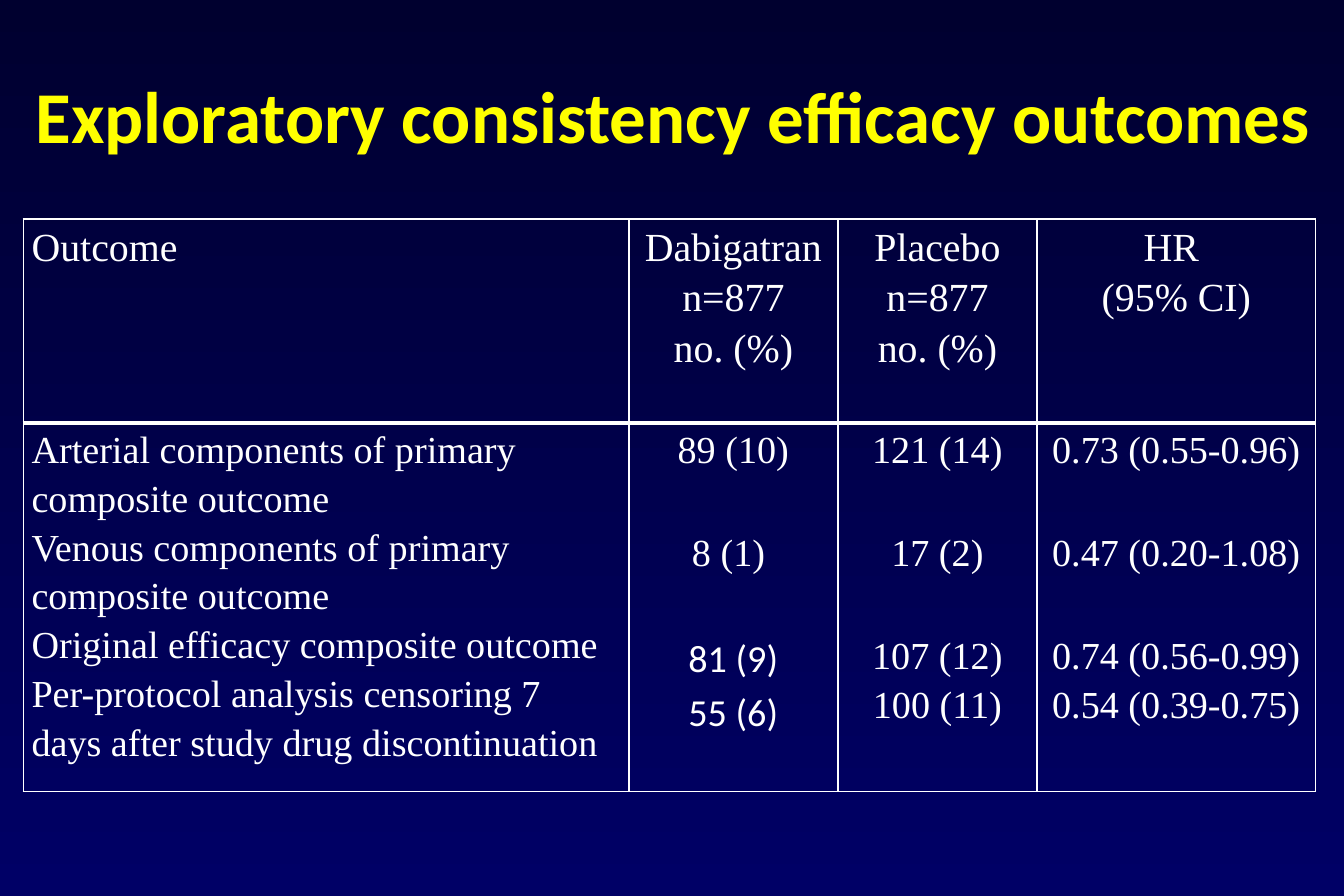
from lxml.etree import SubElement
from pptx import Presentation
from pptx.dml.color import RGBColor
from pptx.enum.text import MSO_ANCHOR, PP_ALIGN
from pptx.oxml import parse_xml
from pptx.oxml.ns import nsdecls
from pptx.util import Pt

# Content
TITLE = "Exploratory consistency efficacy outcomes"
HEADINGS = [
    ["Outcome"],
    ["Dabigatran", "n=877", "no. (%)"],
    ["Placebo", "n=877", "no. (%)"],
    ["HR ", "(95% CI)"],
]
RESULTS = [
    ["Arterial components of primary composite outcome",
     "Venous components of primary composite outcome",
     "Original efficacy composite outcome",
     "Per-protocol analysis censoring 7 days after study drug discontinuation"],
    ["89 (10)", "8 (1) ", "81 (9)", "55 (6)"],
    ["121 (14)", "17 (2)", "107 (12)", "100 (11)"],
    ["0.73 (0.55-0.96)", "0.47 (0.20-1.08)", "0.74 (0.56-0.99)", "0.54 (0.39-0.75)"],
]
CALIBRI_RESULTS = {"81 (9)", "55 (6)"}

# Style
NIGHT = RGBColor(0x00, 0x00, 0x2F)
NAVY = RGBColor(0x00, 0x00, 0x66)
YELLOW = RGBColor(0xFF, 0xFF, 0x00)
WHITE = RGBColor(0xFF, 0xFF, 0xFF)
SANS, SERIF = "Calibri", "Times New Roman"
COLUMN_WIDTHS = [365, 126, 120, 168]
ROW_HEIGHTS = [123, 215]
TABLE_LEFT, TABLE_TOP = 14, 132
HEADING_SIZE, RESULT_SIZE = 24, 23
LINE_SPACING = 1.15
OUTCOME_GAP = 32.6  # lines up figures with outcomes that take two lines
THIN, THICK = 1, 3


def add_text(paragraph, text, size, font, color, bold=False):
    run = paragraph.add_run()
    run.text = text
    run.font.size = Pt(size)
    run.font.name = font
    run.font.bold = bold
    run.font.color.rgb = color


def set_borders(cell, top, bottom):
    properties = cell._tc.get_or_add_tcPr()
    widths = {"lnL": THIN, "lnR": THIN, "lnT": top, "lnB": bottom}
    for position, (side, width) in enumerate(widths.items()):
        border = parse_xml(f'<a:{side} {nsdecls("a")} w="{Pt(width)}"/>')
        fill = SubElement(border, border.tag.replace(side, "solidFill"))
        SubElement(fill, border.tag.replace(side, "srgbClr"), val=str(WHITE))
        properties.insert(position, border)


def fill_cell(cell, lines, size, centred, gaps):
    cell.fill.background()
    cell.margin_left = cell.margin_right = Pt(5)
    cell.margin_top = cell.margin_bottom = 0
    frame = cell.text_frame
    for index, line in enumerate(lines):
        paragraph = frame.add_paragraph() if index else frame.paragraphs[0]
        paragraph.alignment = PP_ALIGN.CENTER if centred else PP_ALIGN.LEFT
        paragraph.line_spacing = LINE_SPACING
        paragraph.space_before = Pt(OUTCOME_GAP if index in gaps else 0)
        add_text(paragraph, line, size, SANS if line in CALIBRI_RESULTS else SERIF, WHITE)


presentation = Presentation()
presentation.slide_width, presentation.slide_height = Pt(810), Pt(540)
slide = presentation.slides.add_slide(presentation.slide_layouts[6])

# Background
backdrop = slide.background.fill
backdrop.gradient()
backdrop.gradient_angle = 270
for stop, color in zip(backdrop.gradient_stops, (NIGHT, NAVY)):
    stop.color.rgb = color

# Title
title = slide.shapes.add_textbox(Pt(10), Pt(24), Pt(792), Pt(90)).text_frame
title.word_wrap = True
title.vertical_anchor = MSO_ANCHOR.MIDDLE
title.paragraphs[0].alignment = PP_ALIGN.CENTER
add_text(title.paragraphs[0], TITLE, 44, SANS, YELLOW, bold=True)

# Outcomes table
outcomes = slide.shapes.add_table(
    len(ROW_HEIGHTS), len(COLUMN_WIDTHS), Pt(TABLE_LEFT), Pt(TABLE_TOP),
    Pt(sum(COLUMN_WIDTHS)), Pt(sum(ROW_HEIGHTS))).table
outcomes.first_row = outcomes.horz_banding = False
for row, height in zip(outcomes.rows, ROW_HEIGHTS):
    row.height = Pt(height)
for index, width in enumerate(COLUMN_WIDTHS):
    outcomes.columns[index].width = Pt(width)
    heading, result = outcomes.cell(0, index), outcomes.cell(1, index)
    centred = index > 0
    fill_cell(heading, HEADINGS[index], HEADING_SIZE, centred, ())
    fill_cell(result, RESULTS[index], RESULT_SIZE, centred, (1, 2) if centred else ())
    set_borders(heading, THIN, THICK)
    set_borders(result, THICK, THIN)

presentation.save("out.pptx")
